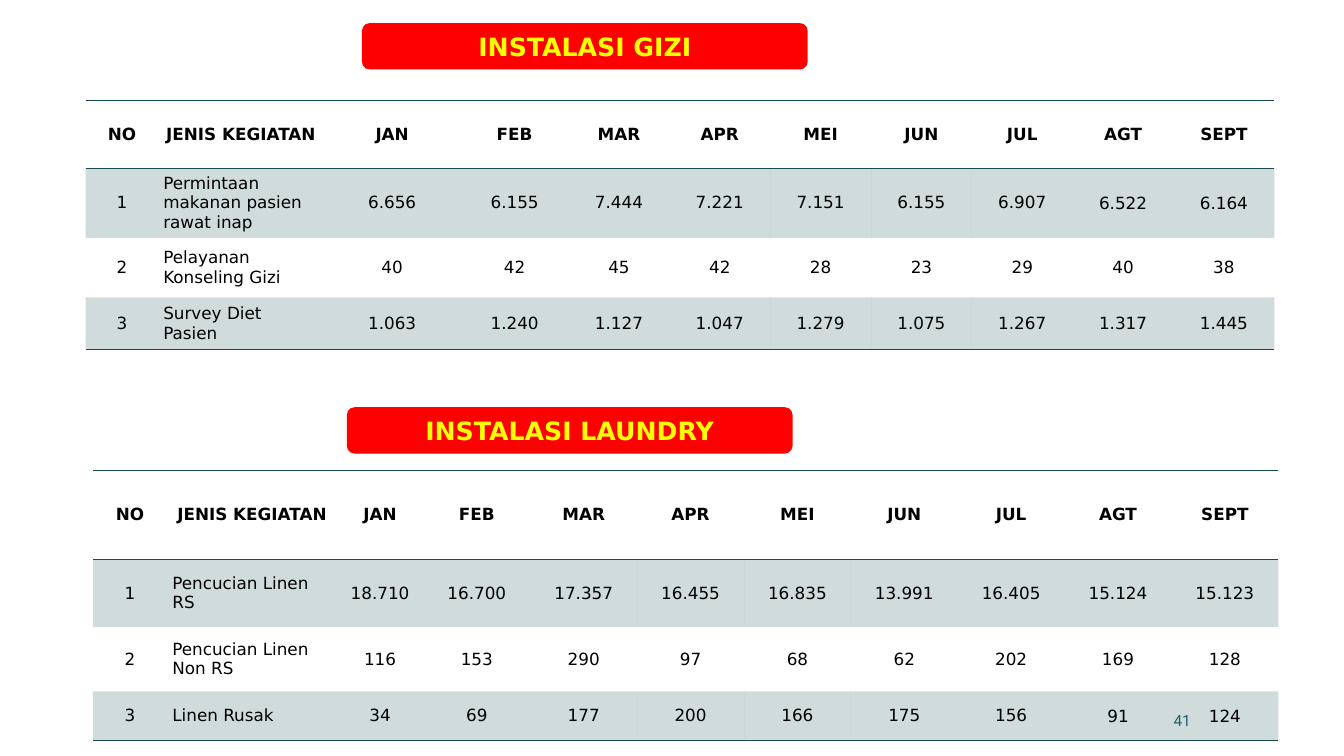
from dataclasses import dataclass

from lxml import etree
from pptx import Presentation, util as u
from pptx.dml.color import RGBColor
from pptx.enum import shapes, text
from pptx.oxml import ns

Inches, Pt = u.Inches, u.Pt


@dataclass(frozen=True)
class Theme:
    font: str = "DejaVu Sans"
    number_font: str = "Roboto"
    rule: str = "164B4F"
    band_alpha: int = 20
    ink: str = "000000"
    banner: str = "FF0000"
    banner_ink: str = "FFFF00"
    number_ink: str = "1F696F"
    title_size: int = 18
    table_size: int = 12
    number_size: int = 11


THEME = Theme()
PLAIN_TABLE = "{2D5ABB26-0587-4C30-8999-92F81FD0307C}"
HEADER = ["NO", "JENIS KEGIATAN", "JAN", "FEB", "MAR", "APR", "MEI", "JUN",
          "JUL", "AGT", "SEPT"]
LABEL_COLUMN = 1
TIGHT_FROM = HEADER.index("AGT")

NUTRITION = [
    ("Permintaan makanan pasien rawat inap",
     "6.656 6.155 7.444 7.221 7.151 6.155 6.907 6.522 6.164"),
    ("Pelayanan Konseling Gizi", "40 42 45 42 28 23 29 40 38"),
    ("Survey Diet Pasien",
     "1.063 1.240 1.127 1.047 1.279 1.075 1.267 1.317 1.445"),
]
LAUNDRY = [
    ("Pencucian Linen RS",
     "18.710 16.700 17.357 16.455 16.835 13.991 16.405 15.124 15.123"),
    ("Pencucian Linen Non RS", "116 153 290 97 68 62 202 169 128"),
    ("Linen Rusak", "34 69 177 200 166 175 156 91 124"),
]


def write(frame, words, size, color, align, bold=False, font=THEME.font):
    frame.text = words
    paragraph = frame.paragraphs[0]
    paragraph.alignment = align
    run_font = paragraph.runs[0].font
    run_font.name, run_font.size, run_font.bold = font, Pt(size), bold
    run_font.color.rgb = RGBColor.from_string(color)


def add_banner(slide, left, top, title):
    banner = slide.shapes.add_shape(
        shapes.MSO_SHAPE.ROUNDED_RECTANGLE,
        Inches(left), Inches(top), Inches(4.42), Inches(0.46))
    banner.shadow.inherit = False
    banner.fill.solid()
    banner.fill.fore_color.rgb = RGBColor.from_string(THEME.banner)
    banner.line.fill.background()
    banner.text_frame.vertical_anchor = text.MSO_ANCHOR.MIDDLE
    write(banner.text_frame, title, THEME.title_size, THEME.banner_ink,
          text.PP_ALIGN.CENTER, bold=True)


def shade(cell):
    cell.fill.solid()
    cell.fill.fore_color.rgb = RGBColor.from_string(THEME.rule)
    color = cell._tc.tcPr.find(".//" + ns.qn("a:srgbClr"))
    etree.SubElement(color, ns.qn("a:alpha"), val=str(THEME.band_alpha * 1000))


def rule(cell, sides):
    # Borders come before the fill inside the cell properties
    for position, side in enumerate(sides):
        line = etree.Element(ns.qn(f"a:ln{side}"), w=str(Pt(1)))
        fill = etree.SubElement(line, ns.qn("a:solidFill"))
        etree.SubElement(fill, ns.qn("a:srgbClr"), val=THEME.rule)
        cell._tc.get_or_add_tcPr().insert(position, line)


def set_margins(cell, column):
    side, bottom = (0.01, 0) if column >= TIGHT_FROM else (0.05, 0.05)
    cell.margin_left = cell.margin_right = cell.margin_top = Inches(side)
    cell.margin_bottom = Inches(bottom)


def add_activity_table(slide, left, top, widths, heights, activities):
    rows = [HEADER] + [[str(number), label, *counts.split()]
                       for number, (label, counts) in enumerate(activities, 1)]
    table = slide.shapes.add_table(
        len(rows), len(HEADER), Inches(left), Inches(top),
        Inches(sum(widths)), Inches(sum(heights))).table
    table.first_row = table.horz_banding = False
    table._tbl.tblPr.find(ns.qn("a:tableStyleId")).text = PLAIN_TABLE
    for column, width in zip(table.columns, widths):
        column.width = Inches(width)
    for row, height in zip(table.rows, heights):
        row.height = Inches(height)

    for r, values in enumerate(rows):
        is_header = r == 0
        for c, value in enumerate(values):
            cell = table.cell(r, c)
            is_label = c == LABEL_COLUMN and not is_header
            align = text.PP_ALIGN.LEFT if is_label else text.PP_ALIGN.CENTER
            write(cell.text_frame, value, THEME.table_size, THEME.ink, align,
                  bold=is_header)
            cell.vertical_anchor = text.MSO_ANCHOR.MIDDLE
            set_margins(cell, 0 if is_header else c)
            if r % 2:
                shade(cell)
            else:
                cell.fill.background()
            if is_header:
                rule(cell, "TB")
            elif r == len(rows) - 1:
                rule(cell, "B")


def add_page_number(slide, number):
    box = slide.shapes.add_textbox(
        Inches(8.8), Inches(6.95), Inches(3.11), Inches(0.4))
    box.text_frame.word_wrap = True
    box.text_frame.vertical_anchor = text.MSO_ANCHOR.MIDDLE
    write(box.text_frame, number, THEME.number_size, THEME.number_ink,
          text.PP_ALIGN.RIGHT, font=THEME.number_font)


def main():
    deck = Presentation()
    deck.slide_width, deck.slide_height = Inches(13.33), Inches(7.5)
    slide = deck.slides.add_slide(deck.slide_layouts[6])

    # Activity tables, with the page number beneath the second one
    add_activity_table(slide, 0.85, 1, [0.72, 1.64, 1.36, 1.07] + [1] * 7,
                       [0.67, 0.69, 0.59, 0.52], NUTRITION)
    add_page_number(slide, "41")
    add_activity_table(slide, 0.92, 4.67, [0.74, 1.68, 0.86] + [1.06] * 8,
                       [0.88, 0.67, 0.64, 0.49], LAUNDRY)

    # Section banners
    add_banner(slide, 3.59, 0.23, "INSTALASI GIZI")
    add_banner(slide, 3.44, 4.04, "INSTALASI LAUNDRY")

    deck.save("out.pptx")


if __name__ == "__main__":
    main()
